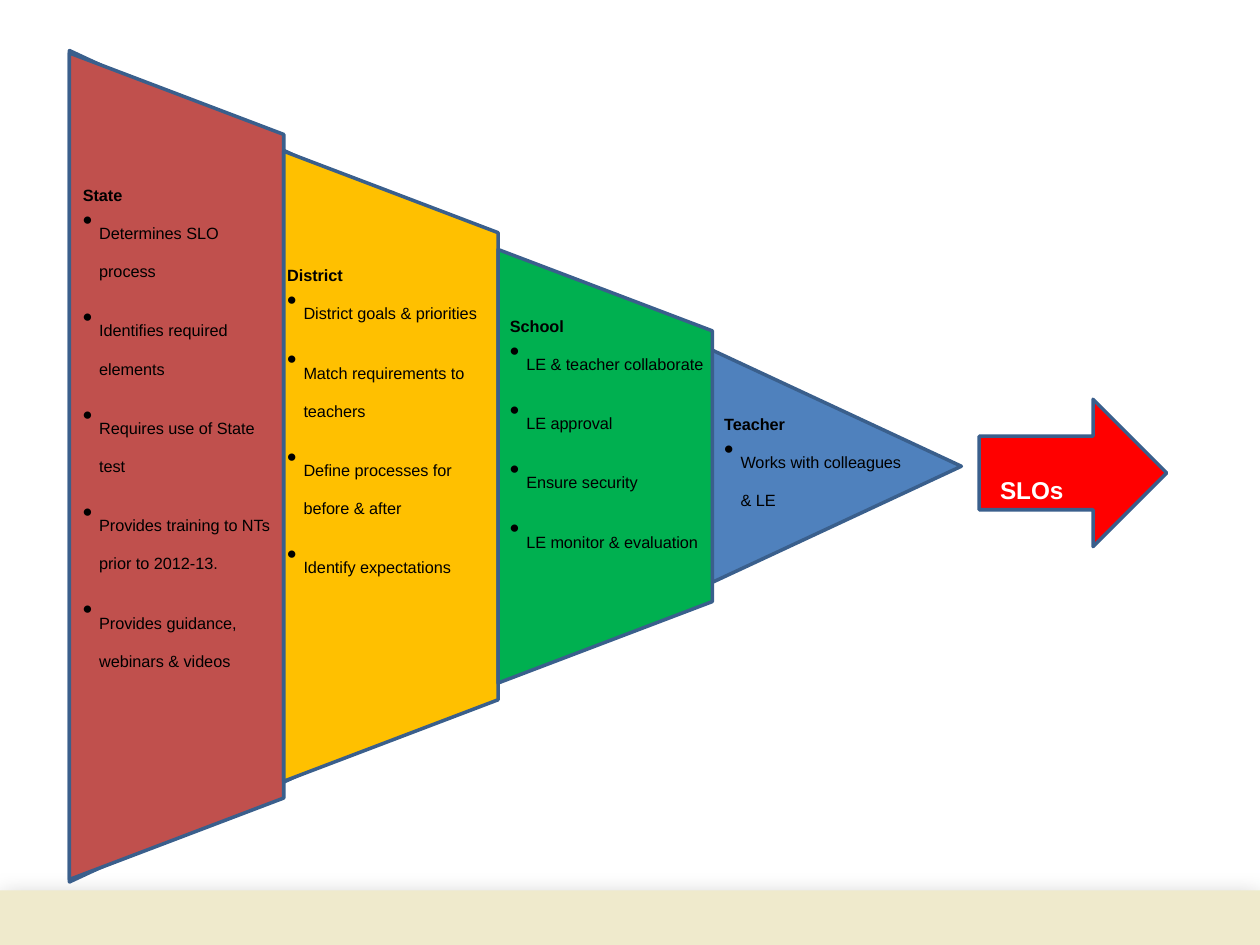
import dataclasses

import lxml.etree
import pptx
import pptx.dml.color
import pptx.enum.shapes
import pptx.enum.text
import pptx.oxml.ns
import pptx.util

Cm = pptx.util.Cm
Pt = pptx.util.Pt
qn = pptx.oxml.ns.qn
Kind = pptx.enum.shapes.MSO_SHAPE

COLORS = {
    "sand": "EFEACC", "blue": "4F81BD", "red": "C0504D", "gold": "FFC000",
    "green": "00B050", "arrow": "FF0000", "edge": "3A5F8C",
    "black": "000000", "white": "FFFFFF",
}
MID = 9.4  # height of the funnel's axis, cm
BAND = 4.32  # width of one funnel band
FIRST = 3.56  # centre of the first band
TALL, DROP = 16.66, 3.96  # first band's height, loss per band


@dataclasses.dataclass
class Level:
    title: str
    left: float
    top: float
    width: float
    height: float
    items: list[str]


LEVELS = [
    Level("State", 1.42, 3.23, 4.32, 12.9, [
        "Determines SLO process", "Identifies required elements",
        "Requires use of State test",
        "Provides training to NTs prior to 2012-13.",
        "Provides guidance, webinars & videos"]),
    Level("District", 5.54, 4.85, 4.67, 9.07, [
        "District goals & priorities", "Match requirements to teachers",
        "Define processes for before & after", "Identify expectations"]),
    Level("School", 10.03, 5.87, 4.57, 7.01, [
        "LE & teacher collaborate", "LE approval", "Ensure security",
        "LE monitor & evaluation"]),
    Level("Teacher", 14.35, 7.85, 4.32, 4.11, ["Works with colleagues & LE"]),
]


def tint(name: str) -> pptx.dml.color.RGBColor:
    return pptx.dml.color.RGBColor.from_string(COLORS[name])


def draw(slide, kind, left: float, top: float, width: float, height: float,
         fill: str, edge: bool = True):
    """Add a filled preset shape; lengths in cm."""
    shape = slide.shapes.add_shape(
        kind, Cm(left), Cm(top), Cm(width), Cm(height))
    shape.shadow.inherit = False
    shape.fill.solid()
    shape.fill.fore_color.rgb = tint(fill)
    if edge:
        shape.line.color.rgb = tint("edge")
        shape.line.width = Pt(2)
    else:
        shape.line.fill.background()
    return shape


def turn(slide, kind, mid: float, width: float, height: float, fill: str):
    """Add a shape centred on the axis and turned to point right."""
    shape = draw(slide, kind, mid - width / 2, MID - height / 2,
                 width, height, fill)
    shape.rotation = 90
    return shape


def shade(shape) -> None:
    """Give the shape a soft shadow."""
    effects = shape._element.spPr.find(qn("a:effectLst"))
    outer = lxml.etree.SubElement(
        effects, qn("a:outerShdw"), blurRad=str(Pt(15)), dist=str(Pt(3)),
        dir="5400000", rotWithShape="0")
    color = lxml.etree.SubElement(
        outer, qn("a:srgbClr"), val=COLORS["black"])
    lxml.etree.SubElement(color, qn("a:alpha"), val="25000")


def style(para, size: int, color: str, bold: bool) -> None:
    """Set the paragraph's font, lowered below the baseline."""
    font = para.font
    font.name, font.size, font.bold = "Arial", Pt(size), bold
    font.color.rgb = tint(color)
    para._p.pPr.find(qn("a:defRPr")).set("baseline", "-25000")


def dot(para) -> None:
    """Turn the paragraph into a bullet with a hanging indent."""
    para.space_after = Pt(12)
    props = para._p.pPr
    props.set("marL", str(Cm(0.33)))
    props.set("indent", str(-Cm(0.33)))
    mark = lxml.etree.Element(qn("a:buChar"), char="•")
    props.find(qn("a:defRPr")).addprevious(mark)


def write(slide, level: Level, size: int = 16, color: str = "black") -> None:
    """Add a bold title with its bullets."""
    box = slide.shapes.add_textbox(
        Cm(level.left), Cm(level.top), Cm(level.width), Cm(level.height))
    frame = box.text_frame
    frame.word_wrap = True
    frame.auto_size = pptx.enum.text.MSO_AUTO_SIZE.SHAPE_TO_FIT_TEXT
    title = frame.paragraphs[0]
    title.text = level.title
    style(title, size, color, True)
    for item in level.items:
        para = frame.add_paragraph()
        para.text = item
        style(para, size, color, False)
        dot(para)


def main() -> None:
    deck = pptx.Presentation()
    deck.slide_width, deck.slide_height = Cm(25.4), Cm(19.05)
    slide = deck.slides.add_slide(deck.slide_layouts[6])

    # Footer band
    shade(draw(slide, Kind.RECTANGLE, 0, 17.95, 25.4, 1.1, "sand", False))

    # Funnel: the tip lies behind the bands
    turn(slide, Kind.ISOSCELES_TRIANGLE, 10.39, 16.76, 17.98, "blue")
    for i, fill in enumerate(("red", "gold", "green")):
        band = turn(slide, Kind.TRAPEZOID, FIRST + i * BAND,
                    TALL - i * DROP, BAND, fill)
        band.adjustments[0] = 0.38

    # Outcome arrow
    draw(slide, Kind.RIGHT_ARROW, 19.74, 8.05, 3.78, 2.97, "arrow")

    # Texts
    for level in LEVELS:
        write(slide, level)
    write(slide, Level("SLOs", 19.91, 8.89, 3.05, 1.27, []), 24, "white")

    deck.save("out.pptx")


if __name__ == "__main__":
    main()
